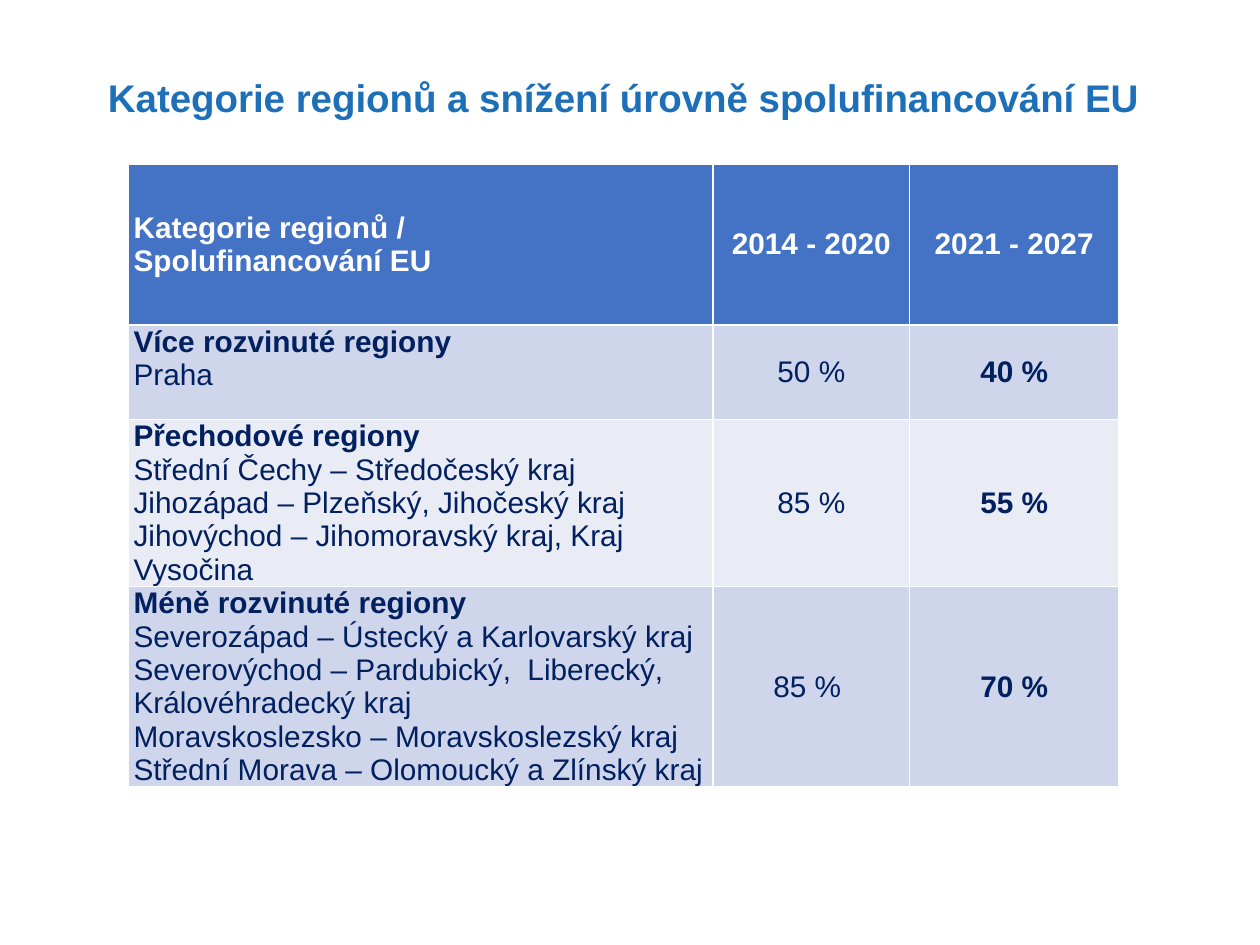
from dataclasses import dataclass

from lxml.etree import SubElement
from pptx import Presentation
from pptx.dml.color import RGBColor as Color
from pptx.enum.text import MSO_ANCHOR as Anchor, PP_ALIGN as Align
from pptx.oxml.ns import qn
from pptx.util import Inches, Pt

TITLE = "Kategorie regionů a snížení úrovně spolufinancování EU"
HEADER = (["Kategorie regionů /", "Spolufinancování EU"], "2014 - 2020", "2021 - 2027")
REGIONS = [
    (["Více rozvinuté regiony", "Praha"], "50 %", "40 %"),
    (["Přechodové regiony",
      "Střední Čechy – Středočeský kraj",
      "Jihozápad – Plzeňský, Jihočeský kraj",
      "Jihovýchod – Jihomoravský kraj, Kraj Vysočina"], "85 %", "55 %"),
    (["Méně rozvinuté regiony",
      "Severozápad – Ústecký a Karlovarský kraj",
      "Severovýchod – Pardubický,  Liberecký, Královéhradecký kraj",
      "Moravskoslezsko – Moravskoslezský kraj",
      "Střední Morava – Olomoucký a Zlínský kraj"], "85 % ", "70 %"),
]
COLUMN_WIDTHS = (4.64, 1.56, 1.66)
ROW_HEIGHTS = (1.28, 0.75, 1.26, 1.57)


@dataclass(frozen=True)
class Theme:
    font: str = "Arial"
    title_size: int = 22
    table_size: int = 17
    title: str = "1D70B8"
    header: str = "4472C4"
    bands: tuple = ("CFD5EA", "E9EBF5")
    ink: str = "002060"
    white: str = "FFFFFF"


THEME = Theme()


def set_font(font, size, color, bold):
    font.name, font.size, font.bold = THEME.font, Pt(size), bold
    font.color.rgb = Color.from_string(color)


def add_borders(cell):
    properties = cell._tc.get_or_add_tcPr()
    for side in ("lnL", "lnR", "lnT", "lnB"):
        line = SubElement(properties, qn(f"a:{side}"), w=str(Pt(1)))
        fill = SubElement(line, qn("a:solidFill"))
        SubElement(fill, qn("a:srgbClr"), val=THEME.white)


def fill_cell(cell, content, row, column):
    is_header, is_label = row == 0, column == 0
    add_borders(cell)
    cell.fill.solid()
    background = THEME.header if is_header else THEME.bands[(row - 1) % 2]
    cell.fill.fore_color.rgb = Color.from_string(background)
    cell.margin_left = cell.margin_right = Inches(0.04)
    cell.margin_top = cell.margin_bottom = 0
    cell.vertical_anchor = Anchor.TOP if is_label and not is_header else Anchor.MIDDLE
    lines = content if is_label else [content]
    cell.text = "\n".join(lines)
    for index, para in enumerate(cell.text_frame.paragraphs):
        para.alignment = Align.LEFT if is_label else Align.CENTER
        bold = is_header or column == 2 or (is_label and index == 0)
        set_font(para.font, THEME.table_size, THEME.white if is_header else THEME.ink, bold)


def add_title(page):
    box = page.shapes.title
    box.left, box.top, box.width, box.height = map(Inches, (0.66, 0.29, 8.58, 1.01))
    box.text = TITLE
    box.text_frame.vertical_anchor = Anchor.MIDDLE
    para = box.text_frame.paragraphs[0]
    para.alignment, para.line_spacing = Align.CENTER, 0.9
    set_font(para.font, THEME.title_size, THEME.title, True)


def add_region_table(page):
    rows = [HEADER, *REGIONS]
    table = page.shapes.add_table(
        len(rows), len(COLUMN_WIDTHS), Inches(1.02), Inches(1.3),
        Inches(sum(COLUMN_WIDTHS)), Inches(sum(ROW_HEIGHTS))).table
    for column, width in zip(table.columns, COLUMN_WIDTHS):
        column.width = Inches(width)
    for row, height in zip(table.rows, ROW_HEIGHTS):
        row.height = Inches(height)
    for r, contents in enumerate(rows):
        for c, content in enumerate(contents):
            fill_cell(table.cell(r, c), content, r, c)


def main():
    deck = Presentation()
    deck.slide_width, deck.slide_height = Inches(10), Inches(7.5)
    page = deck.slides.add_slide(deck.slide_layouts[5])
    add_title(page)
    add_region_table(page)
    deck.save("out.pptx")


if __name__ == "__main__":
    main()
